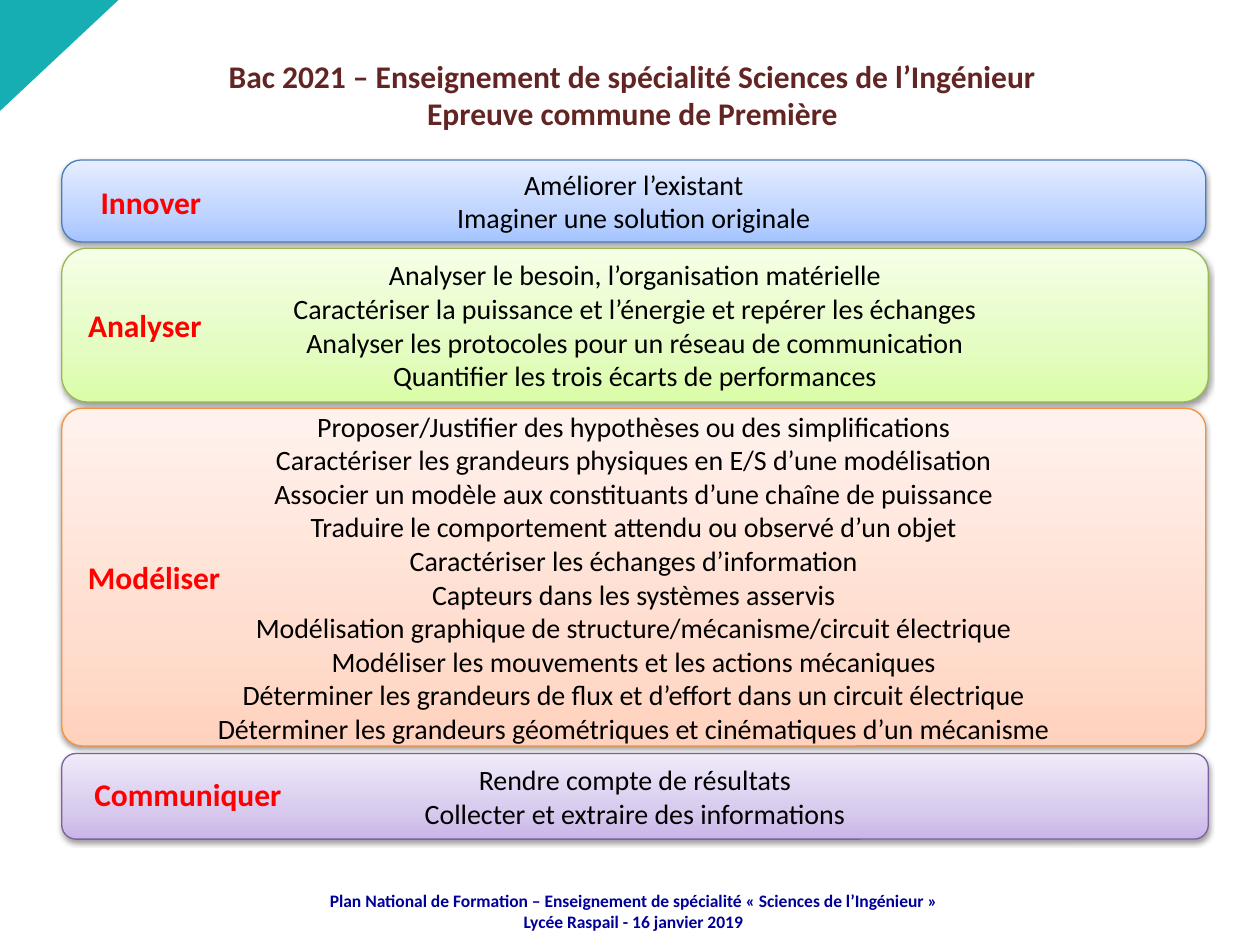
from lxml import etree
from pptx import Presentation
from pptx.dml.color import RGBColor
from pptx.enum.shapes import MSO_SHAPE
from pptx.enum.text import MSO_ANCHOR, MSO_AUTO_SIZE, PP_ALIGN
from pptx.oxml.ns import qn
from pptx.util import Inches, Pt

ROUNDED, TRIANGLE = MSO_SHAPE.ROUNDED_RECTANGLE, MSO_SHAPE.ISOSCELES_TRIANGLE
MIDDLE, TOP = MSO_ANCHOR.MIDDLE, MSO_ANCHOR.TOP
CENTER, LEFT = PP_ALIGN.CENTER, PP_ALIGN.LEFT
FIT_SHAPE = MSO_AUTO_SIZE.SHAPE_TO_FIT_TEXT
FONT = "Calibri"

# One entry per skill: label and its box, band box, corner, gradient, line, lines of text
BANDS = [
    ("Innover", (0.7, 1.4, 1.01, 0.4), (0.49, 1.27, 9.08, 0.65), 0.235,
     ("A4C4FF", "BFD4FF", "E6EEFF"), "4B7EBC",
     ["Améliorer l’existant",
      "Imaginer une solution originale"]),
    ("Analyser", (0.6, 2.38, 1.11, 0.4), (0.49, 1.97, 9.1, 1.22), 0.167,
     ("DAFDA7", "E4FCC2", "F5FFE7"), "98B955",
     ["Analyser le besoin, l’organisation matérielle",
      "Caractériser la puissance et l’énergie et repérer les échanges",
      "Analyser les protocoles pour un réseau de communication",
      "Quantifier les trois écarts de performances"]),
    ("Modéliser", (0.6, 4.38, 1.26, 0.4), (0.49, 3.24, 9.08, 2.68), 0.06,
     ("FFD2BD", "FFDED0", "FFF2ED"), "F69240",
     ["Proposer/Justifier des hypothèses ou des simplifications",
      "Caractériser les grandeurs physiques en E/S d’une modélisation",
      "Associer un modèle aux constituants d’une chaîne de puissance",
      "Traduire le comportement attendu ou observé d’un objet",
      "Caractériser les échanges d’information",
      "Capteurs dans les systèmes asservis",
      "Modélisation graphique de structure/mécanisme/circuit électrique",
      "Modéliser les mouvements et les actions mécaniques",
      "Déterminer les grandeurs de flux et d’effort dans un circuit électrique",
      "Déterminer les grandeurs géométriques et cinématiques d’un mécanisme"]),
    ("Communiquer", (0.65, 6.1, 1.7, 0.4), (0.49, 5.98, 9.1, 0.68), 0.167,
     ("C9B5E8", "D8CBEE", "F0EAF9"), "7D60A0",
     ["Rendre compte de résultats",
      "Collecter et extraire des informations"]),
]


def rgb(color):
    return RGBColor.from_string(color)


def inches(box):
    return [Inches(v) for v in box]


def write(tf, lines, size=16, color="000000", bold=False, align=CENTER,
          anchor=TOP, wrap=True):
    tf.word_wrap = wrap
    tf.vertical_anchor = anchor
    for i, line in enumerate(lines):
        p = tf.paragraphs[0] if i == 0 else tf.add_paragraph()
        p.alignment = align
        r = p.add_run()
        r.text = line
        r.font.name, r.font.size, r.font.bold = FONT, Pt(size), bold
        r.font.color.rgb = rgb(color)


def add_text(slide, box, lines, **fmt):
    tf = slide.shapes.add_textbox(*inches(box)).text_frame
    write(tf, lines, **fmt)
    return tf


def add_color(parent, color, alpha=None):
    clr = etree.SubElement(parent, qn("a:srgbClr"), val=color)
    if alpha is not None:
        etree.SubElement(clr, qn("a:alpha"), val=str(alpha * 1000))


def set_gradient(s, colors):
    s.fill.gradient()
    s.fill.gradient_angle = 90
    stops = s._element.spPr.find(".//" + qn("a:gsLst"))
    for stop in list(stops):
        stops.remove(stop)
    for position, color in zip((0, 35, 100), colors):
        add_color(etree.SubElement(stops, qn("a:gs"), pos=str(position * 1000)), color)


def set_shadow(s):
    s.shadow.inherit = False
    effects = s._element.spPr.find(qn("a:effectLst"))
    shadow = etree.SubElement(effects, qn("a:outerShdw"), blurRad=str(Pt(3.1)),
                              dist=str(Pt(1.6)), dir="5400000", rotWithShape="0")
    add_color(shadow, "000000", alpha=38)


def add_band(slide, box, corner, colors, line, lines):
    s = slide.shapes.add_shape(ROUNDED, *inches(box))
    s.adjustments[0] = corner
    set_gradient(s, colors)
    s.line.color.rgb = rgb(line)
    s.line.width = Pt(0.75)
    set_shadow(s)
    write(s.text_frame, lines, anchor=MIDDLE)


def add_label(slide, box, label):
    tf = add_text(slide, box, [label], size=18, color="FF0000", bold=True,
                  align=LEFT, wrap=False)
    tf.auto_size = FIT_SHAPE


def add_corner(slide, box):
    s = slide.shapes.add_shape(TRIANGLE, *inches(box))
    s.adjustments[0] = 1
    s.rotation = 180
    s.fill.solid()
    s.fill.fore_color.rgb = rgb("16AEB2")
    s.line.fill.background()
    s.shadow.inherit = False


def add_footer(slide, box):
    tf = add_text(slide, box, [
        "Plan National de Formation – Enseignement de spécialité «\u00a0Sciences de l’Ingénieur\u00a0»",
        "Lycée Raspail - 16 janvier 2019",
    ], size=10, color="000099", bold=True, anchor=MIDDLE)
    tf.margin_left = tf.margin_right = tf.margin_top = tf.margin_bottom = 0


def add_title(slide, box):
    tf = add_text(slide, box, [
        "Bac 2021 – Enseignement de spécialité Sciences de l’Ingénieur",
        "Epreuve commune de Première",
    ], size=18, color="632523", bold=True)
    tf.auto_size = FIT_SHAPE


def main():
    prs = Presentation()
    prs.slide_width, prs.slide_height = Inches(10), Inches(7.5)
    slide = prs.slides.add_slide(prs.slide_layouts[6])

    # Frame of the slide
    add_corner(slide, (0, 0, 0.94, 0.88))
    add_footer(slide, (2.38, 7.03, 5.29, 0.4))
    add_title(slide, (0.98, 0.4, 8.08, 0.71))

    # Skill bands with their labels
    for label, label_box, box, corner, colors, line, lines in BANDS:
        add_band(slide, box, corner, colors, line, lines)
        add_label(slide, label_box, label)

    prs.save("out.pptx")


if __name__ == "__main__":
    main()
